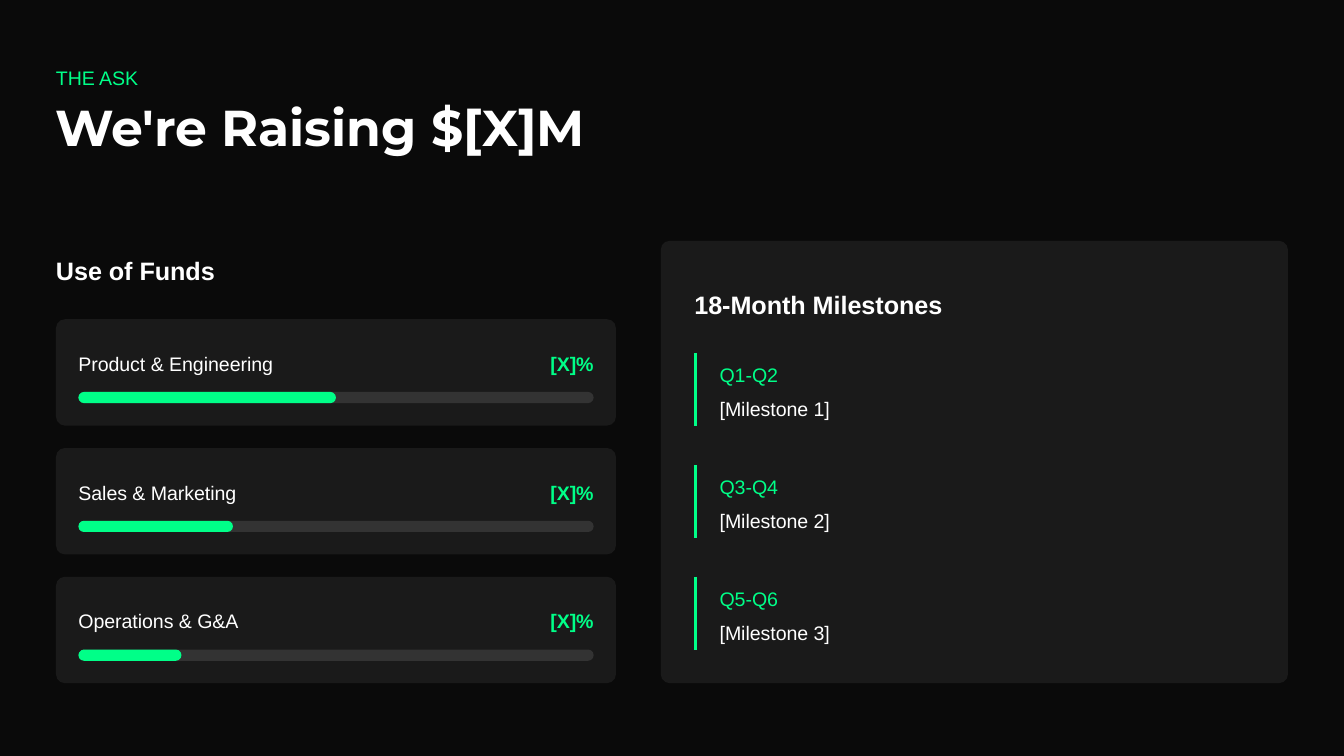
from dataclasses import dataclass
from typing import NamedTuple

from pptx import Presentation
from pptx import util as u
from pptx.dml.color import RGBColor
from pptx.enum import shapes, text
from pptx.oxml.ns import qn
from lxml import etree


class Style(NamedTuple):
    size: float
    lead: float  # line height in points
    before: float
    after: float
    font: str = "Arial"
    bold: bool = False


@dataclass(frozen=True)
class Theme:
    back: str = "0A0A0A"
    card: str = "1A1A1A"
    track: str = "333333"
    green: str = "00FF88"
    white: str = "FFFFFF"
    label: Style = Style(10.5, 15, 3, 6)
    title: Style = Style(27, 30, 0, 24, "Montserrat", True)
    head: Style = Style(13.5, 21, 3, 6, bold=True)
    body: Style = Style(10.5, 15, 3, 3)
    strong: Style = Style(10.5, 15, 3, 3, bold=True)


class Box(NamedTuple):
    """A place on the grid, in columns and rows."""
    col: float
    row: float
    wide: float
    high: float


class Fund(NamedTuple):
    name: str
    wide: float  # columns
    share: float  # filled part of the bar


class Goal(NamedTuple):
    term: str
    name: str


THEME = Theme()
COLS, ROWS = 240, 135
CELL = u.Inches(10) / COLS
ROUND = 1.6  # corner radius in cells
FUNDS = [
    Fund("Product & Engineering", 36, 0.5),
    Fund("Sales & Marketing", 29, 0.3),
    Fund("Operations & G&A", 29.3, 0.2),
]
GOALS = [Goal(f"Q{2 * n - 1}-Q{2 * n}", f"[Milestone {n}]") for n in (1, 2, 3)]


def cells(count: float) -> u.Emu:
    return u.Emu(round(count * CELL))


def place(shape, box: Box) -> None:
    shape.left, shape.top, shape.width, shape.height = map(cells, box)


def write(shape, words: str, style: Style, color: str,
          align=text.PP_ALIGN.LEFT) -> None:
    frame = shape.text_frame
    frame.auto_size = text.MSO_AUTO_SIZE.NONE
    frame.word_wrap = True
    frame.vertical_anchor = text.MSO_ANCHOR.TOP
    frame.margin_left = frame.margin_right = 0
    frame.margin_top = frame.margin_bottom = 0
    para = frame.paragraphs[0]
    para.alignment = align
    para.line_spacing = u.Pt(style.lead)
    para.space_before = u.Pt(style.before)
    para.space_after = u.Pt(style.after)
    run = para.add_run()
    run.text = words
    run.font.name = style.font
    run.font.size = u.Pt(style.size)
    run.font.bold = style.bold
    run.font.color.rgb = RGBColor.from_string(color)


def add_text(slide, box: Box, words: str, style: Style, color: str,
             align=text.PP_ALIGN.LEFT) -> None:
    write(slide.shapes.add_textbox(*map(cells, box)), words, style, color, align)


def add_panel(slide, box: Box, color: str) -> None:
    """Draw a rounded box; thin ones become pills."""
    shape = slide.shapes.add_shape(
        shapes.MSO_SHAPE.ROUNDED_RECTANGLE, *map(cells, box))
    shape.adjustments[0] = min(0.5, ROUND / min(box.wide, box.high))
    shape.shadow.inherit = False
    shape.fill.solid()
    shape.fill.fore_color.rgb = RGBColor.from_string(color)
    shape.line.fill.background()


def add_rule(slide, col: float, row: float, high: float) -> None:
    line = slide.shapes.add_connector(
        shapes.MSO_CONNECTOR.STRAIGHT,
        *map(cells, (col, row, col, row + high)))
    line.line.color.rgb = RGBColor.from_string(THEME.green)
    line.line.width = u.Pt(1.5)
    etree.SubElement(line._element.spPr, qn("a:effectLst"))


def add_fund(slide, fund: Fund, row: float) -> None:
    add_panel(slide, Box(10, row, 100, 19), THEME.card)
    add_text(slide, Box(14, row + 5, fund.wide, 5), fund.name,
             THEME.body, THEME.white)
    add_text(slide, Box(98, row + 5, 8, 5), "[X]%",
             THEME.strong, THEME.green, text.PP_ALIGN.RIGHT)
    for share, color in ((1, THEME.track), (fund.share, THEME.green)):
        add_panel(slide, Box(14, row + 13, 92 * share, 2), color)


def add_goal(slide, goal: Goal, row: float) -> None:
    add_rule(slide, 124.25, row, 13)
    add_text(slide, Box(128.5, row + 1, 97.5, 5), goal.term,
             THEME.body, THEME.green)
    add_text(slide, Box(128.5, row + 7, 97.5, 5), goal.name,
             THEME.body, THEME.white)


def main() -> None:
    deck = Presentation()
    deck.slide_width, deck.slide_height = cells(COLS), cells(ROWS)
    slide = deck.slides.add_slide(deck.slide_layouts.get_by_name("Title Only"))
    slide.background.fill.solid()
    slide.background.fill.fore_color.rgb = RGBColor.from_string(THEME.back)

    add_text(slide, Box(10, 11, 224.5, 5), "THE ASK", THEME.label, THEME.green)
    title = slide.shapes.title
    place(title, Box(10, 18, 112.5, 10))
    write(title, "We're Raising $[X]M", THEME.title, THEME.white)

    add_text(slide, Box(10, 44, 102, 7), "Use of Funds",
             THEME.head, THEME.white)
    for i, fund in enumerate(FUNDS):
        add_fund(slide, fund, 57 + 23 * i)

    add_panel(slide, Box(118, 43, 112, 79), THEME.card)
    add_text(slide, Box(124, 50, 102, 7), "18-Month Milestones",
             THEME.head, THEME.white)
    for i, goal in enumerate(GOALS):
        add_goal(slide, goal, 63 + 20 * i)

    deck.save("out.pptx")


if __name__ == "__main__":
    main()
